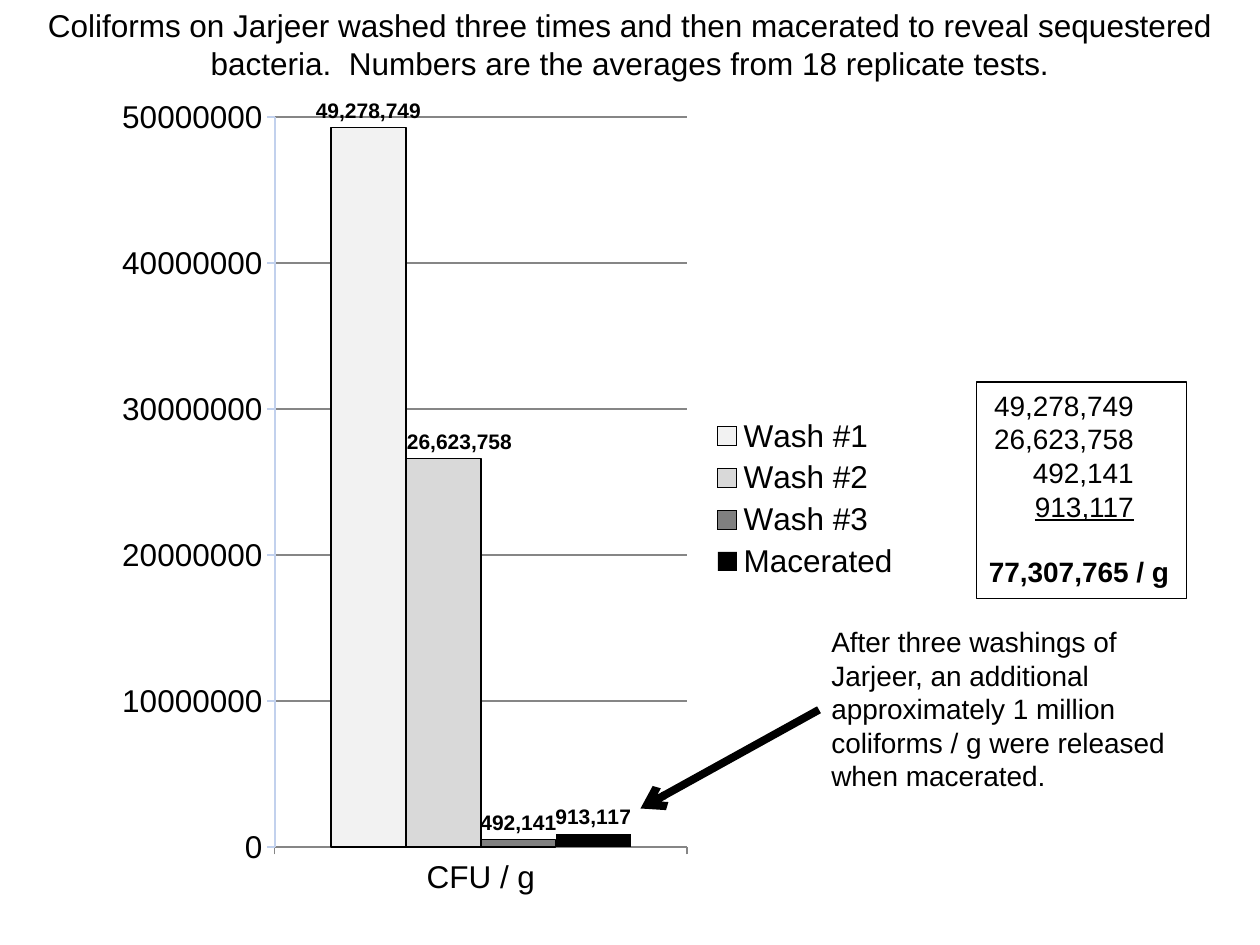
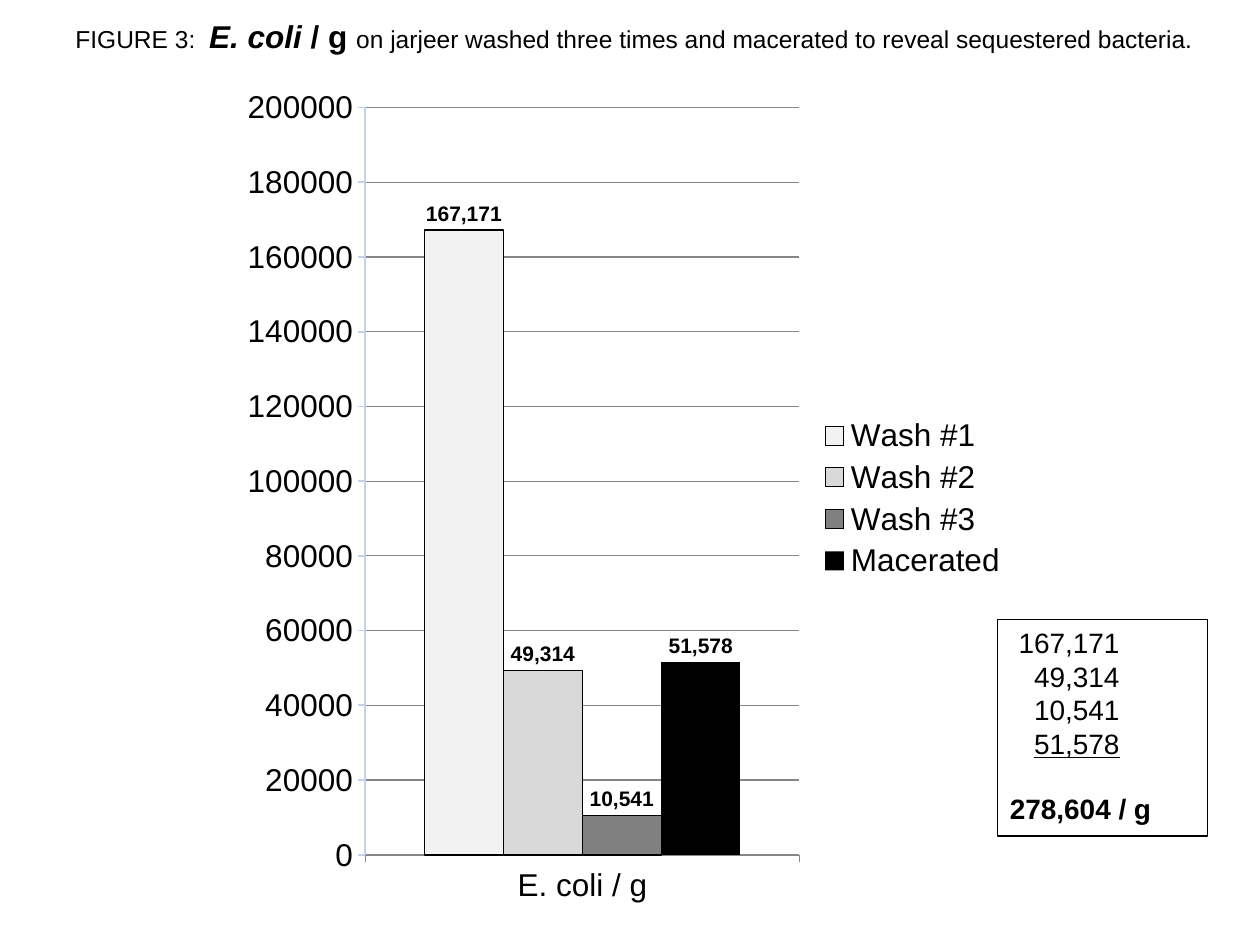
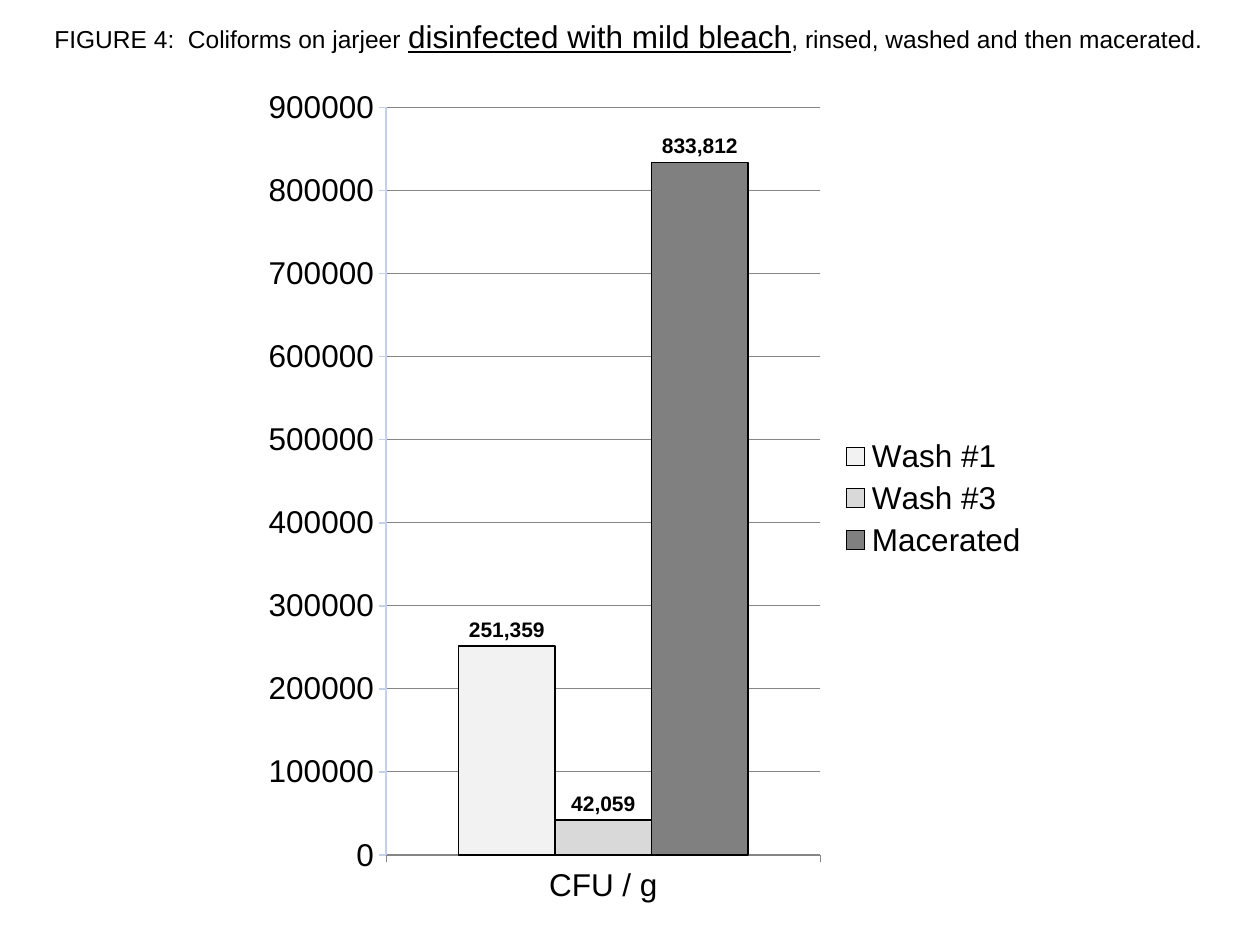
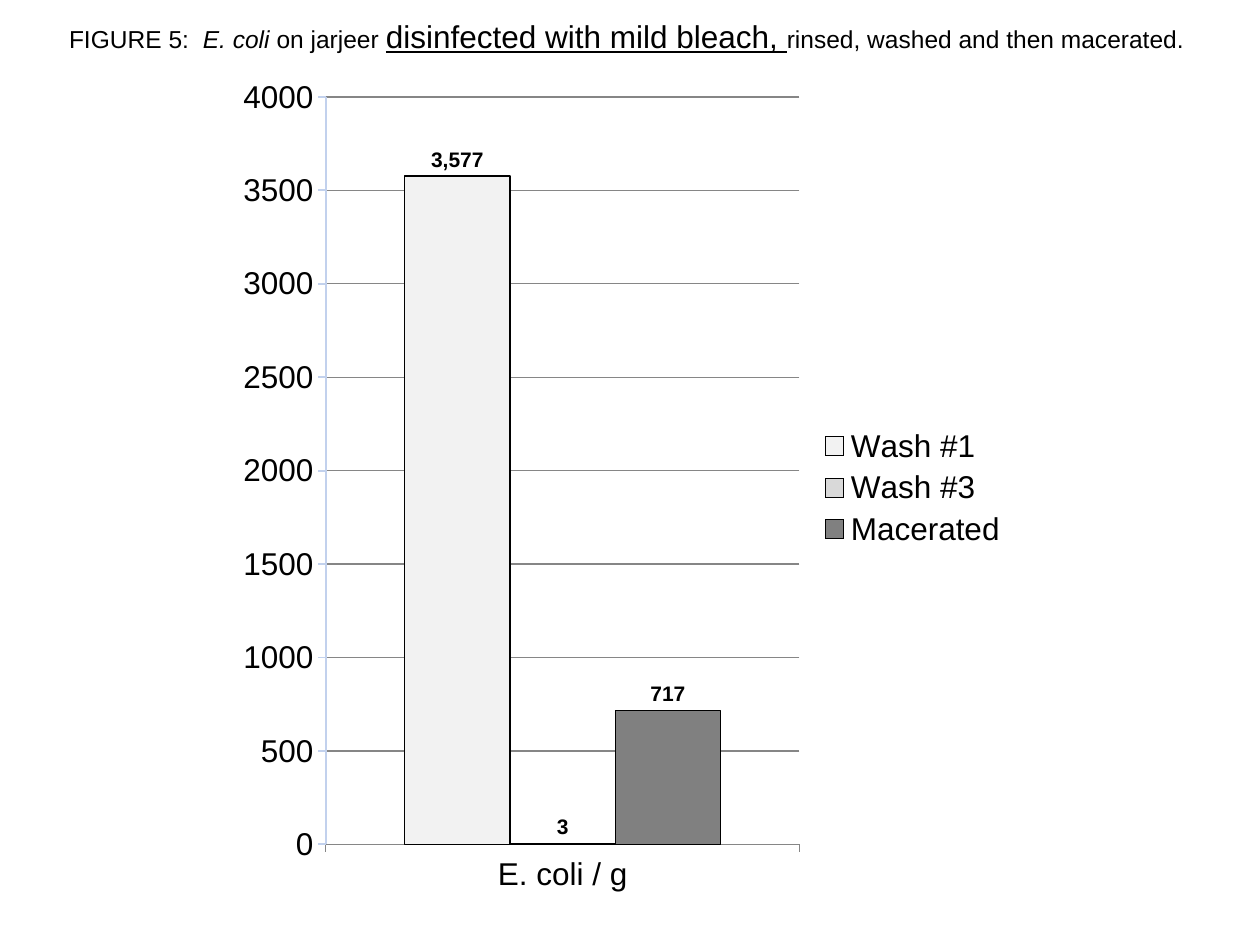
"""Build four slides of coliform and E. coli counts on washed jarjeer."""
from lxml.etree import SubElement as Sub
from pptx import Presentation as Deck
from pptx.chart.data import CategoryChartData as Data
from pptx.dml.color import RGBColor as Rgb
from pptx.enum.chart import XL_CHART_TYPE as Kind
from pptx.enum.chart import XL_LABEL_POSITION as Spot
from pptx.enum.chart import XL_LEGEND_POSITION as Side
from pptx.enum.chart import XL_TICK_MARK as Tick
from pptx.enum.shapes import MSO_CONNECTOR as Wire
from pptx.enum.shapes import MSO_SHAPE as Form
from pptx.enum.text import MSO_ANCHOR as Anchor
from pptx.enum.text import MSO_AUTO_SIZE as Fit
from pptx.enum.text import PP_ALIGN as Align
from pptx.oxml import parse_xml as node_of
from pptx.oxml.ns import nsdecls, qn
from pptx.util import Inches, Pt

INK = {"text": "000000", "axis": "C2D1ED", "grid": "868686"}
BARS = ["F2F2F2", "D9D9D9", "808080", "000000"]
COLS, ROWS = 120, 90
SMALL, BODY, LARGE = {"size": Pt(14)}, {"size": Pt(16)}, {"size": Pt(18)}
MARK = {"size": Pt(12), "bold": True}
FOUR = ["Wash #1", "Wash #2", "Wash #3", "Macerated"]
THREE = ["Wash #1", "Wash #3", "Macerated"]


class Page:
    """Hold the deck style and the current slide."""

    def __init__(self):
        self.deck = Deck()
        self.deck.slide_width, self.deck.slide_height = Inches(10), Inches(7.5)
        self.slide = None

    def add(self):
        """Start a blank slide."""
        self.slide = self.deck.slides.add_slide(self.deck.slide_layouts[6])

    def grid(self, *cells):
        """Turn column, row pairs into lengths."""
        units = self.deck.slide_width / COLS, self.deck.slide_height / ROWS
        return [round(cell * units[i % 2]) for i, cell in enumerate(cells)]

    def style(self, font, form):
        """Apply format values to a font."""
        for key, value in {"name": "Arial", **form}.items():
            setattr(font, key, value)
        font.color.rgb = Rgb.from_string(INK["text"])

    def line(self, line, ink, width):
        """Colour a line and set its width."""
        line.color.rgb = Rgb.from_string(ink)
        line.width = Pt(width)

    def fill(self, para, runs):
        """Add styled runs to a paragraph."""
        for text, form in runs:
            run = para.add_run()
            run.text = text
            self.style(run.font, form)

    def text(self, box, runs, align=Align.LEFT, **frame):
        """Add a text box of one paragraph."""
        shape = self.slide.shapes.add_textbox(*self.grid(*box))
        form = {"word_wrap": True, "auto_size": Fit.SHAPE_TO_FIT_TEXT, **frame}
        for key, value in form.items():
            setattr(shape.text_frame, key, value)
        para = shape.text_frame.paragraphs[0]
        para.alignment = align
        self.fill(para, runs)
        return shape

    def total(self, left, top, vals, stop):
        """Add a framed column of numbers with its sum."""
        shape = self.slide.shapes.add_shape(
            Form.RECTANGLE, *self.grid(left, top, 20, 20.6))
        shape.shadow.inherit = False
        shape.fill.background()
        self.line(shape.line, INK["text"], 1)
        frame = shape.text_frame
        frame.word_wrap, frame.vertical_anchor = True, Anchor.TOP
        frame.auto_size = Fit.SHAPE_TO_FIT_TEXT
        for i, val in enumerate(vals):
            para = frame.add_paragraph() if i else frame.paragraphs[0]
            para.alignment = Align.LEFT
            tabs = Sub(para._p.get_or_add_pPr(), qn("a:tabLst"))
            Sub(tabs, qn("a:tab"), pos=str(Inches(stop)), algn="r")
            last = i == len(vals) - 1
            self.fill(para, [(f"\t{val:,}", {**BODY, "underline": last})])
        para = frame.add_paragraph()
        para.alignment, para.space_before = Align.LEFT, Pt(18)
        self.fill(para, [(f"{sum(vals):,} / g", {**BODY, "bold": True})])

    def arrow(self, shape, site, end):
        """Draw an arrow from a side of a shape to a point."""
        x, y = self.grid(*end)
        wire = self.slide.shapes.add_connector(Wire.STRAIGHT, x, y, x, y)
        wire.begin_connect(shape, site)
        self.line(wire.line, INK["text"], 4.5)
        form = wire._element.spPr
        Sub(form.find(qn("a:ln")), qn("a:tailEnd"), type="arrow")
        Sub(form, qn("a:effectLst"))

    def layout(self, **parts):
        """Make a manual layout element."""
        body = "".join(f'<c:{k} val="{v}"/>' for k, v in parts.items())
        return node_of(f'<c:layout {nsdecls("c")}><c:manualLayout>{body}'
                       "</c:manualLayout></c:layout>")

    def chart(self, box, cat, names, vals, top, step, left, wide):
        """Add a column chart with one bar per series."""
        data = Data(number_format="#,##0")
        data.categories = [cat]
        for name, val in zip(names, vals):
            data.add_series(name, [val])
        chart = self.slide.shapes.add_chart(
            Kind.COLUMN_CLUSTERED, *self.grid(*box), data).chart
        self.style(chart.font, LARGE)
        chart.has_title, chart.has_legend = False, True
        chart.legend.position = Side.RIGHT
        chart.legend.include_in_layout = False
        plot = chart.plots[0]
        plot.gap_width, plot.overlap, plot.vary_by_categories = 150, 0, False
        for bar, ink in zip(plot.series, BARS):
            bar.format.fill.solid()
            bar.format.fill.fore_color.rgb = Rgb.from_string(ink)
            if ink != INK["text"]:
                self.line(bar.format.line, INK["text"], 0.75)
            label = bar.data_labels
            label.show_value, label.position = True, Spot.OUTSIDE_END
            label.number_format, label.number_format_is_linked = "#,##0", False
            self.style(label.font, MARK)
        axis = chart.value_axis
        form = {"minimum_scale": 0, "maximum_scale": top, "major_unit": step,
                "has_major_gridlines": True, "major_tick_mark": Tick.OUTSIDE}
        for key, value in form.items():
            setattr(axis, key, value)
        axis.tick_labels.number_format = "General"
        axis.tick_labels.number_format_is_linked = False
        self.line(axis.format.line, INK["axis"], 1)
        self.line(axis.major_gridlines.format.line, INK["grid"], 0.75)
        chart.category_axis.major_tick_mark = Tick.OUTSIDE
        self.line(chart.category_axis.format.line, INK["grid"], 0.75)
        area = chart._chartSpace.chart.plotArea
        for old in area.findall(qn("c:layout")):
            area.remove(old)
        area.insert(0, self.layout(
            layoutTarget="inner", xMode="edge", yMode="edge",
            x=left, y=0.04, w=wide, h=0.88))
        return chart

    def nudge(self, chart, order, shift):
        """Move the label of one bar sideways."""
        label = chart.plots[0].series[order].points[0].data_label
        label.position = Spot.OUTSIDE_END
        self.style(label.font, MARK)
        node = chart._chartSpace.xpath(".//c:dLbl")[0]
        node.insert(1, self.layout(x=shift, y=0))


def main():
    """Build and save the deck."""
    page = Page()

    page.add()
    wash = [49278749, 26623758, 492141, 913117]
    chart = page.chart((10, 8, 77, 79), "CFU / g", FOUR, wash,
                       50000000, 10000000, 0.21, 0.51)
    page.nudge(chart, 1, 0.02)
    page.text((2, 0, 116, 8.5), [(
        "Coliforms on Jarjeer washed three times and then macerated to reveal "
        "sequestered bacteria.  Numbers are the averages from 18 replicate "
        "tests.", LARGE)], Align.CENTER)
    note = page.text((78, 58.9, 36, 17.4), [(
        "After three washings of Jarjeer, an additional approximately "
        "1 million coliforms / g were released when macerated.", BODY)])
    page.arrow(note, 1, (61, 77))
    page.total(93, 36.4, wash, 1.15)

    page.add()
    wash = [167171, 49314, 10541, 51578]
    page.chart((22, 7, 75.2, 80.9), "E. coli / g", FOUR, wash,
               200000, 20000, 0.17, 0.55)
    bold = {**LARGE, "bold": True}
    page.text((6, 1, 110, 4.8), [
        ("FIGURE 3:  ", SMALL), ("E. coli", {**bold, "italic": True}),
        (" / g ", bold),
        ("on jarjeer washed three times and macerated to reveal "
         "sequestered bacteria.", SMALL)])
    page.total(95, 59, wash, 0.87)

    under = {**LARGE, "underline": True}
    page.add()
    page.chart((24, 7, 75.2, 80.9), "CFU / g", THREE, [251359, 42059, 833812],
               900000, 100000, 0.17, 0.55)
    page.text((4, 1, 113, 4.8), [
        ("FIGURE 4:  Coliforms on jarjeer ", SMALL),
        ("disinfected with mild bleach", under),
        (", rinsed, washed and then macerated.", SMALL)])

    page.add()
    page.chart((22, 6, 75.2, 80.9), "E. coli / g", THREE, [3577, 3, 717],
               4000, 500, 0.12, 0.6)
    page.text((5.4, 1, 109.2, 4.8), [
        ("FIGURE 5:  ", SMALL), ("E. coli", {**SMALL, "italic": True}),
        (" on jarjeer ", SMALL), ("disinfected with mild bleach, ", under),
        ("rinsed, washed and then macerated.", SMALL)],
        word_wrap=False, vertical_anchor=Anchor.MIDDLE)

    page.deck.save("out.pptx")


if __name__ == "__main__":
    main()
